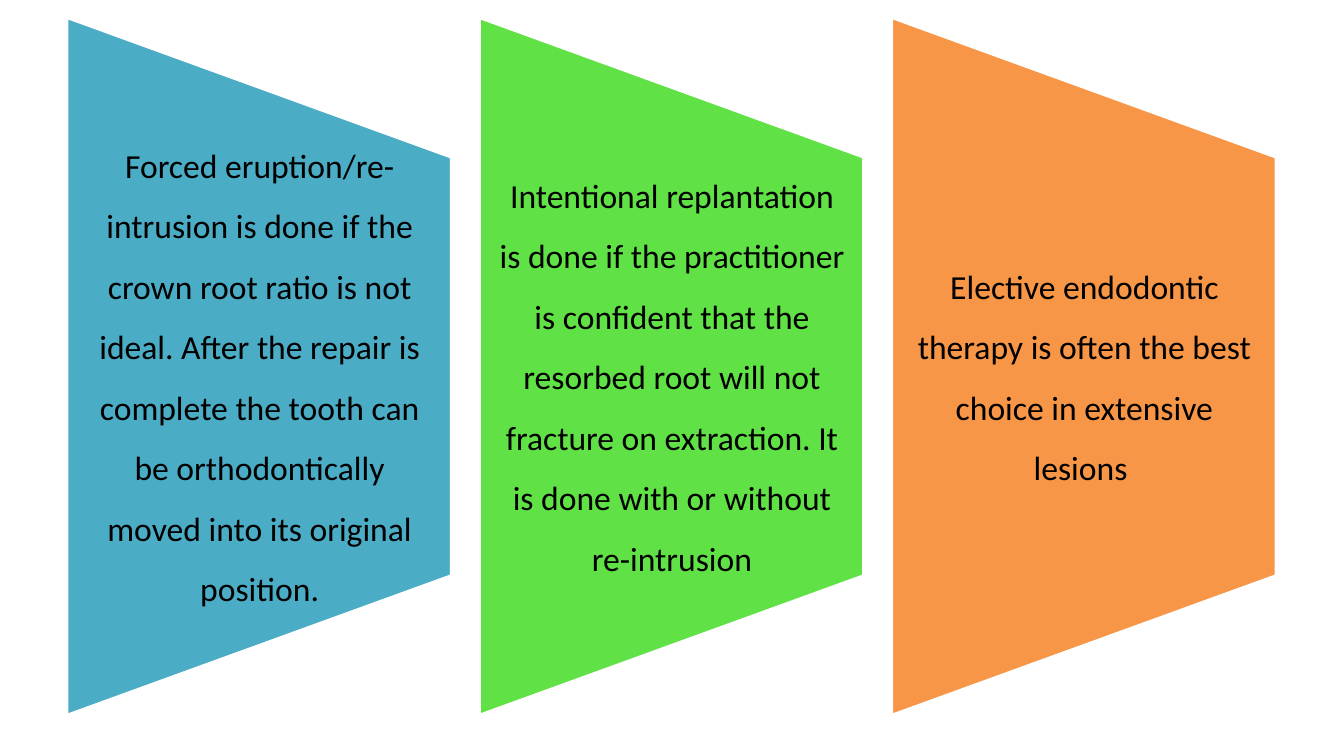
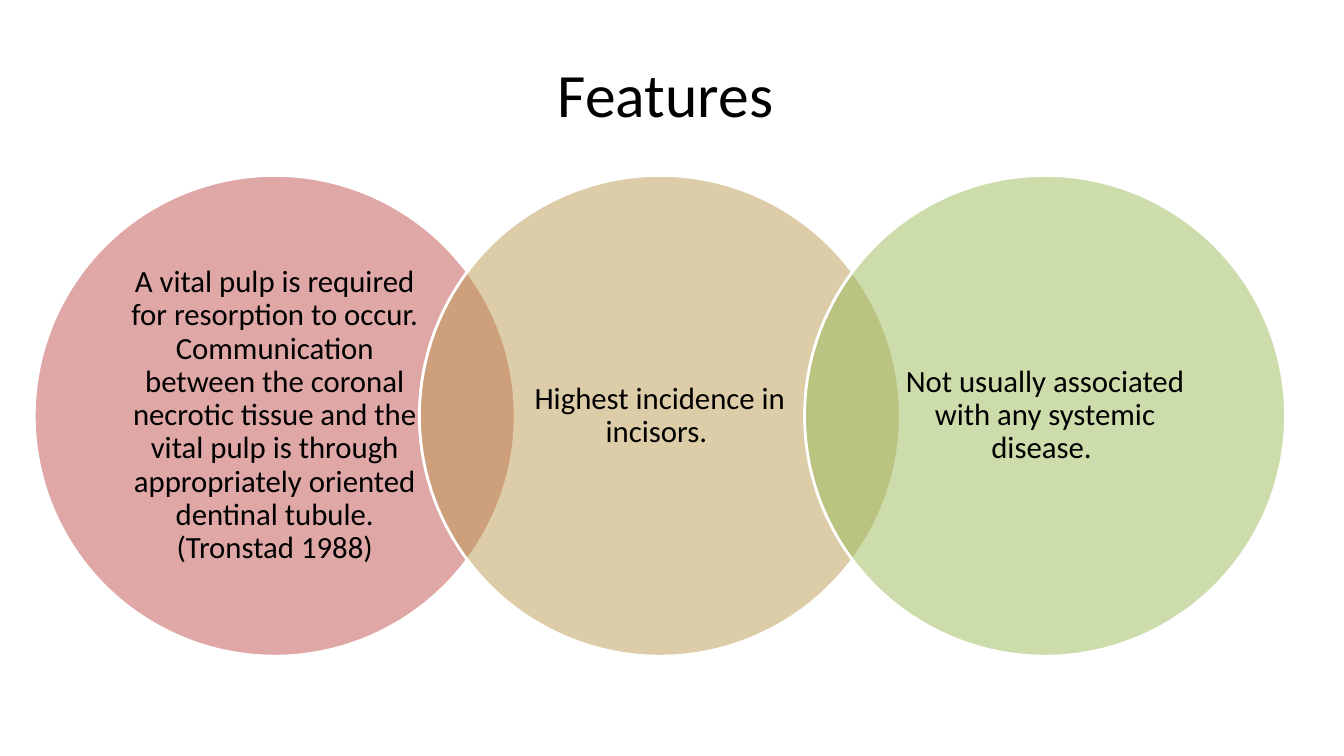
from dataclasses import dataclass

from lxml import etree
from pptx import Presentation
from pptx.dml.color import RGBColor
from pptx.enum.shapes import MSO_SHAPE
from pptx.enum.text import MSO_ANCHOR, PP_ALIGN
from pptx.oxml.ns import qn
from pptx.util import Emu, Pt

TRAPEZOID = MSO_SHAPE.FLOWCHART_MANUAL_OPERATION
CIRCLE = MSO_SHAPE.OVAL
CENTER = PP_ALIGN.CENTER
MIDDLE = MSO_ANCHOR.MIDDLE

EMU_PER_PX = 9144
SLIDE_W, SLIDE_H = 1333, 750
TITLE_ONLY, BLANK = 5, 6
FONT = "Calibri"
BLACK, WHITE = "000000", "FFFFFF"

PANEL_LEFT, PANEL_PITCH, PANEL_W = 67, 409, 381
PANEL_H, PANEL_MID_Y, PANEL_TEXT_H = 692, 363, 415
CIRCLE_LEFT, CIRCLE_TOP, CIRCLE_PITCH, CIRCLE_SIZE = 34, 174, 382, 477


@dataclass(frozen=True)
class Item:
    text: str
    color: str


TREATMENTS = [
    Item("Forced eruption/re-intrusion is done if the crown root ratio is not ideal. "
         "After the repair is complete the tooth can be orthodontically moved into "
         "its original position.", "4BACC6"),
    Item("Intentional replantation is done if the practitioner is confident that the "
         "resorbed root will not fracture on extraction. It is done with or without "
         "re-intrusion", "60E146"),
    Item("Elective endodontic therapy is often the best choice in extensive lesions ",
         "F79646"),
]
FEATURES = [
    Item("A vital pulp is required for resorption to occur. Communication between the "
         "coronal necrotic tissue and the vital pulp is through appropriately oriented "
         "dentinal tubule. (Tronstad 1988)", "C0504D"),
    Item("Highest incidence in incisors. ", "BD9B53"),
    Item("Not usually associated with any systemic disease. ", "9BBB59"),
]


def px(n: int) -> Emu:
    return Emu(n * EMU_PER_PX)


def rgb(color: str) -> RGBColor:
    return RGBColor.from_string(color)


def write(tf, text: str, *, size: int, spacing: float = 1.0,
          inset_x: int = 10, inset_y: int = 5) -> None:
    tf.word_wrap = True
    tf.vertical_anchor = MIDDLE
    tf.margin_left = tf.margin_right = px(inset_x)
    tf.margin_top = tf.margin_bottom = px(inset_y)
    p = tf.paragraphs[0]
    p.alignment = CENTER
    p.line_spacing = spacing
    r = p.add_run()
    r.text = text
    r.font.name = FONT
    r.font.size = Pt(size)
    r.font.color.rgb = rgb(BLACK)


def add_shape(s, kind, x: int, y: int, w: int, h: int, color: str, alpha: int = 100):
    sp = s.shapes.add_shape(kind, px(x), px(y), px(w), px(h))
    sp.shadow.inherit = False
    sp.fill.solid()
    sp.fill.fore_color.rgb = rgb(color)
    if alpha < 100:
        clr = sp.element.spPr.find(qn("a:solidFill")).find(qn("a:srgbClr"))
        etree.SubElement(clr, qn("a:alpha")).set("val", str(alpha * 1000))
    sp.line.color.rgb = rgb(WHITE)
    sp.line.width = Pt(2)
    return sp


def add_panel(s, x: int, item: Item) -> None:
    sp = add_shape(s, TRAPEZOID, x + (PANEL_W - PANEL_H) // 2,
                   PANEL_MID_Y - PANEL_W // 2, PANEL_H, PANEL_W, item.color)
    sp.rotation = 270
    tb = s.shapes.add_textbox(px(x), px(PANEL_MID_Y - PANEL_TEXT_H // 2),
                              px(PANEL_W), px(PANEL_TEXT_H))
    write(tb.text_frame, item.text, size=24, spacing=1.5, inset_x=17, inset_y=0)


def add_circle(s, x: int, item: Item) -> None:
    sp = add_shape(s, CIRCLE, x, CIRCLE_TOP, CIRCLE_SIZE, CIRCLE_SIZE, item.color, 50)
    write(sp.text_frame, item.text, size=22, spacing=0.9, inset_x=26, inset_y=3)


def add_title(s, text: str) -> None:
    title = s.shapes.title
    title.left, title.top, title.width, title.height = px(67), px(30), px(1200), px(125)
    write(title.text_frame, text, size=44)


def main() -> None:
    prs = Presentation()
    prs.slide_width, prs.slide_height = px(SLIDE_W), px(SLIDE_H)

    s = prs.slides.add_slide(prs.slide_layouts[BLANK])
    for i, item in enumerate(TREATMENTS):
        add_panel(s, PANEL_LEFT + i * PANEL_PITCH, item)

    s = prs.slides.add_slide(prs.slide_layouts[TITLE_ONLY])
    add_title(s, "Features ")
    for i, item in enumerate(FEATURES):
        add_circle(s, CIRCLE_LEFT + i * CIRCLE_PITCH, item)

    prs.save("out.pptx")


if __name__ == "__main__":
    main()
